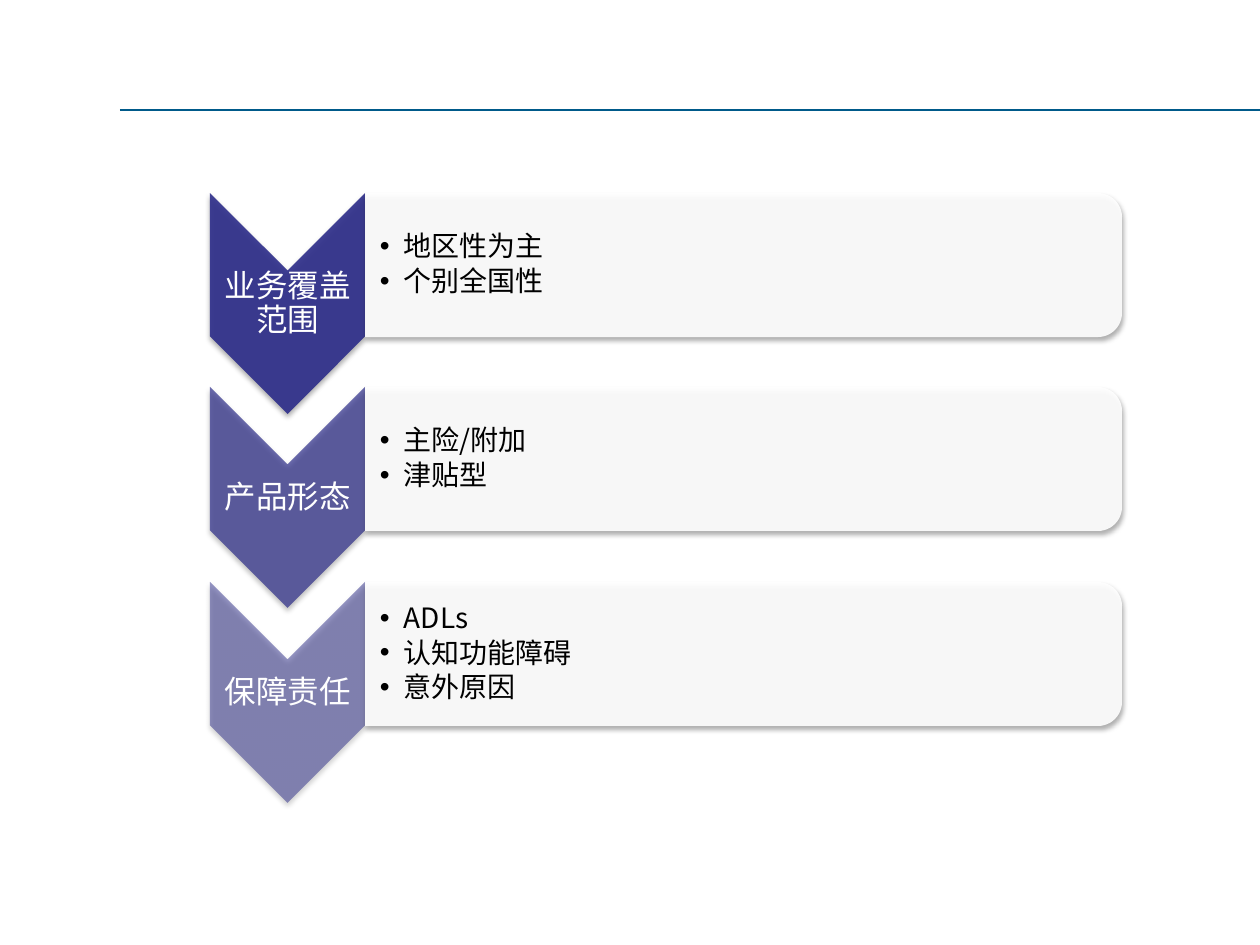
from dataclasses import dataclass

from lxml import etree
from pptx import Presentation
from pptx import util as u
from pptx.dml.color import RGBColor
from pptx.enum import shapes, text
from pptx.oxml.ns import qn

EMU_PER_PX = 914400 / 126


def px(length):
    return u.Emu(round(length * EMU_PER_PX))


def add_xml(parent, tag, **attributes):
    return etree.SubElement(parent, qn(tag), {k: str(v) for k, v in attributes.items()})


@dataclass(frozen=True)
class Theme:
    font: str = "Noto Sans CJK SC"
    rule: str = "005A8A"
    arrow: str = "2D2D8A"
    panel: str = "FFFFFF"
    label: str = "FFFFFF"
    body: str = "000000"
    shadow: str = "000000"
    label_size: int = 18
    body_size: int = 16


class Deck:
    def __init__(self, theme, width, height):
        self.theme = theme
        self.presentation = Presentation()
        self.presentation.slide_width = px(width)
        self.presentation.slide_height = px(height)
        self.slide = self.presentation.slides.add_slide(self.presentation.slide_layouts[6])

    def rule(self, left, top, right):
        line = self.slide.shapes.add_connector(
            shapes.MSO_CONNECTOR.STRAIGHT, px(left), px(top), px(right), px(top))
        line.line.color.rgb = RGBColor.from_string(self.theme.rule)
        line.line.width = u.Pt(0.75)
        add_xml(line._element.spPr, "a:effectLst")

    def turned_shape(self, preset, left, top, width, height, color, opacity):
        inset = (width - height) / 2
        shape = self.slide.shapes.add_shape(
            preset, px(left + inset), px(top - inset), px(height), px(width))
        shape.rotation = 90
        shape.fill.solid()
        shape.fill.fore_color.rgb = RGBColor.from_string(color)
        fill = shape._element.spPr.find(qn("a:solidFill"))
        add_xml(fill[0], "a:alpha", val=opacity * 1000)
        shape.line.fill.background()
        self.soft_shadow(shape)
        return shape

    def soft_shadow(self, shape):
        shape.shadow.inherit = False
        effects = shape._element.spPr.find(qn("a:effectLst"))
        shadow = add_xml(effects, "a:outerShdw", blurRad=u.Pt(3.1), dist=u.Pt(1.8),
                         dir=90 * 60000, rotWithShape=0)
        add_xml(add_xml(shadow, "a:srgbClr", val=self.theme.shadow), "a:alpha", val=35000)

    def text_frame(self, left, top, width, height, left_margin=1):
        frame = self.slide.shapes.add_textbox(
            px(left), px(top), px(width), px(height)).text_frame
        frame.word_wrap = True
        frame.vertical_anchor = text.MSO_ANCHOR.MIDDLE
        frame.margin_left = px(left_margin)
        frame.margin_top = frame.margin_right = frame.margin_bottom = px(1)
        return frame

    def style(self, paragraph, size, color):
        paragraph.line_spacing = 0.9
        paragraph.font.size = u.Pt(size)
        paragraph.font.color.rgb = RGBColor.from_string(color)
        paragraph.font.name = self.theme.font
        add_xml(paragraph.font._element, "a:ea", typeface=self.theme.font)

    def label(self, caption, left, top, width, height):
        paragraph = self.text_frame(left, top, width, height).paragraphs[0]
        paragraph.text = caption
        paragraph.alignment = text.PP_ALIGN.CENTER
        self.style(paragraph, self.theme.label_size, self.theme.label)

    def bullets(self, items, left, top, width, height):
        frame = self.text_frame(left, top, width, height, left_margin=15)
        frame.text = "\n".join(items)
        for paragraph in frame.paragraphs:
            properties = paragraph._p.get_or_add_pPr()
            properties.set("marL", str(px(24)))
            properties.set("indent", str(-px(24)))
            add_xml(properties, "a:buFont", typeface="Arial")
            add_xml(properties, "a:buChar", char="•")
            paragraph.space_after = u.Pt(2.4)
            self.style(paragraph, self.theme.body_size, self.theme.body)

    def topic(self, caption, items, top, opacity):
        self.turned_shape(shapes.MSO_SHAPE.CHEVRON, 210, top, 155, 221,
                          self.theme.arrow, opacity)
        self.label(caption, 210, top + 78, 155, 67)
        self.turned_shape(shapes.MSO_SHAPE.ROUND_2_SAME_RECTANGLE, 365, top, 757, 144,
                          self.theme.panel, 90)
        self.bullets(items, 365, top + 7, 751, 130)


def main():
    deck = Deck(Theme(), 1260, 945)
    deck.rule(120, 110, 1260)
    topics = [
        ("业务覆盖范围", ["地区性为主", "个别全国性"]),
        ("产品形态", ["主险/附加", "津贴型"]),
        ("保障责任", ["ADLs", "认知功能障碍", "意外原因"]),
    ]
    for row, (caption, items) in enumerate(topics):
        deck.topic(caption, items, top=193 + row * 389 // 2, opacity=90 - 20 * row)
    deck.presentation.save("out.pptx")


if __name__ == "__main__":
    main()
